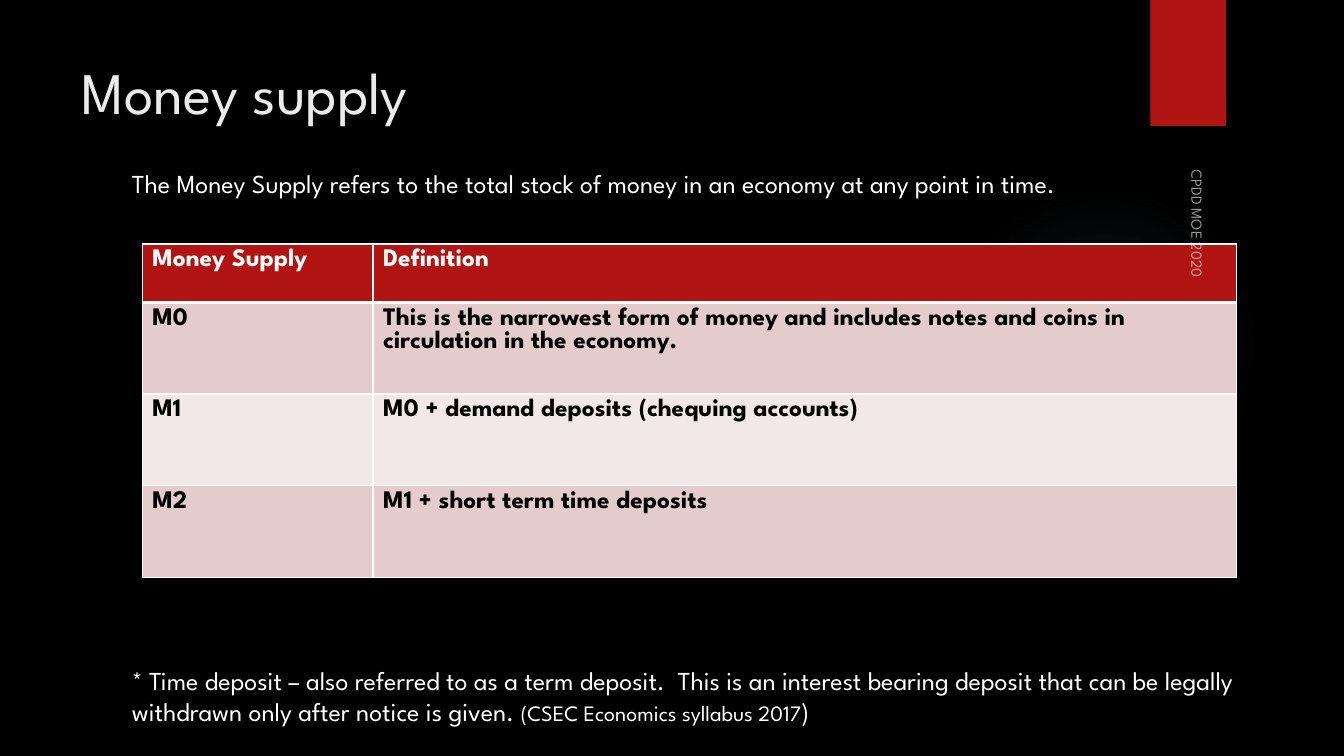
"""Build the slide on money supply and its measures."""
from typing import NamedTuple

from lxml import etree
from pptx import Presentation
from pptx.dml.color import RGBColor
from pptx.enum.shapes import MSO_SHAPE
from pptx.enum.text import MSO_ANCHOR
from pptx.oxml import parse_xml
from pptx.oxml.ns import nsdecls, qn
from pptx.util import Inches, Pt

OVAL, RECTANGLE = MSO_SHAPE.OVAL, MSO_SHAPE.RECTANGLE
TOP, BOTTOM = MSO_ANCHOR.TOP, MSO_ANCHOR.BOTTOM
WIDTH, HEIGHT = Inches(13.33), Inches(7.5)
FONT = "League Spartan"
BLACK, WHITE, RED = "000000", "FFFFFF", "B01513"
BANDS = ("E4CCCC", "F2E8E7")
GLOW, GLOW_STOPS = "50B9C1", ((0, 7), (36, 6), (69, 0))
TABLE_COLUMNS = (17.18, 64.22)
HEADER_HEIGHT, ROW_HEIGHT = 7.73, 12.13
ROWS = (
    ("Money Supply", "Definition"),
    ("M0", "This is the narrowest form of money and includes notes and coins in circulation in the economy."),
    ("M1", "M0 + demand deposits (chequing accounts)"),
    ("M2", "M1 + short term time deposits"),
)


class Area(NamedTuple):
    left: float
    top: float
    width: float
    height: float


class Span(NamedTuple):
    text: str
    size: float
    color: str = WHITE
    bold: bool = False
    opacity: int = 100


class TextBlock(NamedTuple):
    area: Area
    spans: tuple[Span, ...]
    anchor: MSO_ANCHOR = TOP
    rotation: int = 0


TEXTS = (
    TextBlock(Area(5.33, 6.67, 77.19, 20.4), (Span("Money supply", 42, "EBEBEB"),)),
    TextBlock(Area(9.08, 21.47, 84.17, 5.6), (
        Span("The Money Supply refers to the total stock of money in an economy at any point in time.", 18.5),
    )),
    TextBlock(Area(9.08, 87.2, 84.17, 10), (
        Span("* Time deposit – also referred to as a term deposit.  This is an interest bearing "
             "deposit that can be legally withdrawn only after notice is given. ", 18.5),
        Span("(CSEC Economics syllabus 2017", 15.7),
        Span(")", 18.5),
    )),
)
FOOTER = TextBlock(Area(73.44, 47.07, 31.66, 4.4), (Span("CPDD MOE 2020", 11, opacity=60),), BOTTOM, 90)


def across(share: float) -> int:
    """Turn a percentage of the slide width into a length."""
    return round(WIDTH * share / 100)


def down(share: float) -> int:
    """Turn a percentage of the slide height into a length."""
    return round(HEIGHT * share / 100)


def place(area: Area) -> tuple[int, int, int, int]:
    """Turn an area in percentages into lengths."""
    return across(area.left), down(area.top), across(area.width), down(area.height)


def paint(fill, color: str) -> None:
    """Make a fill solid in the given hex colour."""
    fill.solid()
    fill.fore_color.rgb = RGBColor.from_string(color)


def add_span(para, span: Span) -> None:
    """Add one formatted run to a paragraph."""
    run = para.add_run()
    run.text = span.text
    run.font.name, run.font.size, run.font.bold = FONT, Pt(span.size), span.bold
    paint(run.font.fill, span.color)
    if span.opacity < 100:
        color = run.font.fill._xPr.find(".//" + qn("a:srgbClr"))
        etree.SubElement(color, qn("a:alpha"), val=str(span.opacity * 1000))


def add_text(page, block: TextBlock) -> None:
    """Add a wrapped text box."""
    box = page.shapes.add_textbox(*place(block.area))
    box.rotation = block.rotation
    box.text_frame.word_wrap = True
    box.text_frame.vertical_anchor = block.anchor
    for span in block.spans:
        add_span(box.text_frame.paragraphs[0], span)


def add_plain_shape(page, kind: MSO_SHAPE, area: Area, color: str):
    """Add a filled shape without line or shadow."""
    shape = page.shapes.add_shape(kind, *place(area))
    shape.shadow.inherit = False
    shape.line.fill.background()
    paint(shape.fill, color)
    return shape


def add_glow(page, area: Area) -> None:
    """Add a faint circular glow."""
    glow = add_plain_shape(page, OVAL, area, GLOW)
    stops = "".join(
        f'<a:gs pos="{position * 1000}"><a:srgbClr val="{GLOW}"><a:alpha val="{opacity * 1000}"/></a:srgbClr></a:gs>'
        for position, opacity in GLOW_STOPS)
    gradient = parse_xml(
        f'<a:gradFill {nsdecls("a")}><a:gsLst>{stops}</a:gsLst><a:path path="circle">'
        '<a:fillToRect l="50000" t="50000" r="50000" b="50000"/></a:path></a:gradFill>')
    properties = glow.element.spPr
    properties.replace(properties.find(qn("a:solidFill")), gradient)


def add_borders(cell, widths: dict[str, int]) -> None:
    """Draw white borders of the given widths on a cell."""
    properties = cell._tc.get_or_add_tcPr()
    for side, width in widths.items():
        properties.append(parse_xml(
            f'<a:ln{side} {nsdecls("a")} w="{Pt(width)}"><a:solidFill>'
            f'<a:srgbClr val="{WHITE}"/></a:solidFill></a:ln{side}>'))


def add_money_table(page, left: float, top: float) -> None:
    """Add the table of money supply measures."""
    heights = (HEADER_HEIGHT,) + (ROW_HEIGHT,) * (len(ROWS) - 1)
    area = Area(left, top, sum(TABLE_COLUMNS), sum(heights))
    table = page.shapes.add_table(len(ROWS), len(TABLE_COLUMNS), *place(area)).table
    for column, width in zip(table.columns, TABLE_COLUMNS):
        column.width = across(width)
    for index, (height, texts) in enumerate(zip(heights, ROWS)):
        table.rows[index].height = down(height)
        header = index == 0
        for cell, text in zip(table.rows[index].cells, texts):
            add_borders(cell, {"L": 1, "R": 1, "T": 3 if index == 1 else 1, "B": 3 if header else 1})
            paint(cell.fill, RED if header else BANDS[(index - 1) % 2])
            add_span(cell.text_frame.paragraphs[0], Span(text, 18, WHITE if header else BLACK, True))


def main() -> None:
    """Build and save the deck."""
    deck = Presentation()
    deck.slide_width, deck.slide_height = WIDTH, HEIGHT
    page = deck.slides.add_slide(deck.slide_layouts[6])
    paint(page.background.fill, BLACK)
    add_glow(page, Area(70.59, 24.4, 23.11, 41.07))
    add_plain_shape(page, RECTANGLE, Area(85.6, 0, 5.63, 16.67), RED)
    for block in TEXTS:
        add_text(page, block)
    add_money_table(page, 10.58, 32.27)
    add_text(page, FOOTER)
    deck.save("out.pptx")


if __name__ == "__main__":
    main()
